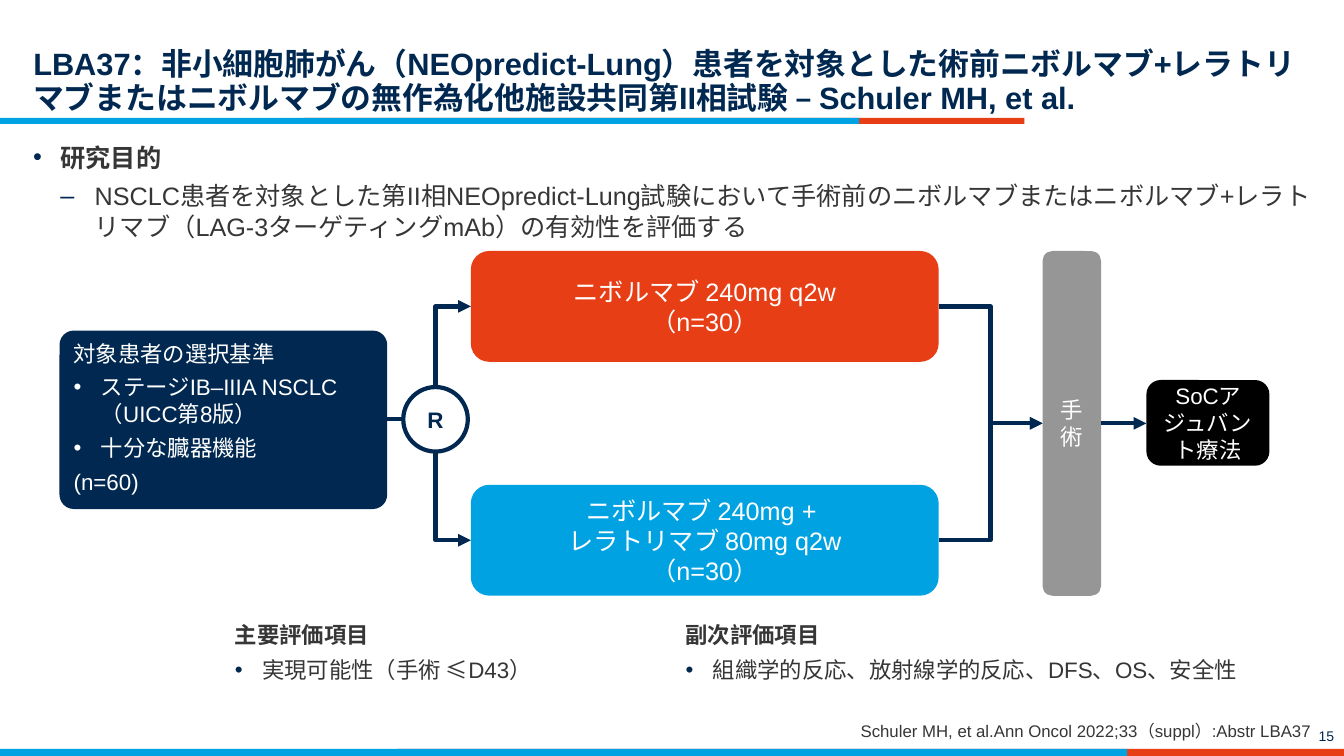
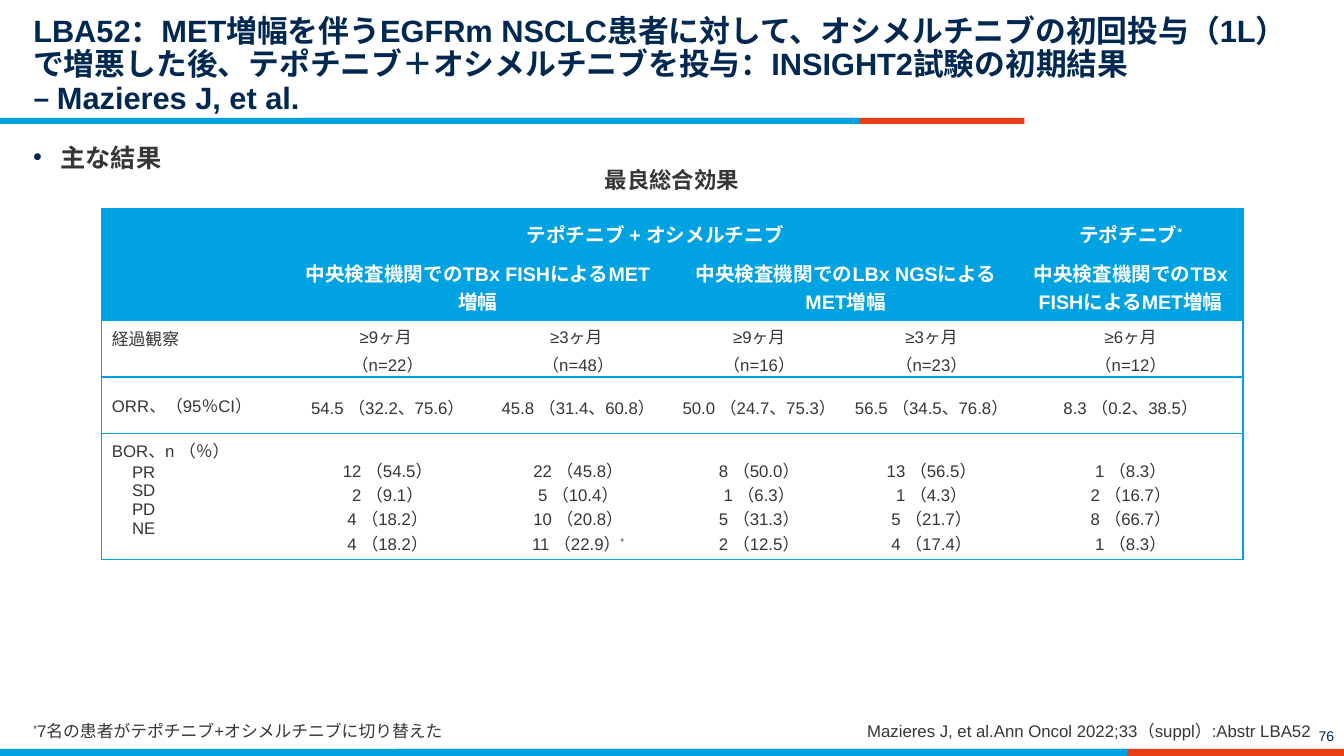
from lxml import etree
from pptx import Presentation
from pptx.dml.color import RGBColor
from pptx.enum.shapes import MSO_CONNECTOR, MSO_SHAPE
from pptx.enum.text import MSO_ANCHOR, MSO_AUTO_SIZE, PP_ALIGN
from pptx.oxml.ns import qn
from pptx.util import Inches, Pt

LEFT, CENTER, RIGHT = PP_ALIGN.LEFT, PP_ALIGN.CENTER, PP_ALIGN.RIGHT
TOP, MIDDLE, BOTTOM = MSO_ANCHOR.TOP, MSO_ANCHOR.MIDDLE, MSO_ANCHOR.BOTTOM
STRAIGHT, ELBOW = MSO_CONNECTOR.STRAIGHT, MSO_CONNECTOR.ELBOW
RECT, ROUNDED, OVAL = MSO_SHAPE.RECTANGLE, MSO_SHAPE.ROUNDED_RECTANGLE, MSO_SHAPE.OVAL

FONT = "Arial"
COLORS = {
    "navy": "002850",
    "blue": "00A2E1",
    "red": "E73E16",
    "text": "363636",
    "grey": "969696",
    "black": "000000",
    "white": "FFFFFF",
}
INDENTS = {"•": (0.27, 0.27), "–": (0.61, 0.34)}


def write(frame, lines, size, color="text", bold=False, align=LEFT, after=0, bullet_color="navy"):
    frame.text = "\n".join("" for _ in lines)
    for paragraph, line in zip(frame.paragraphs, lines):
        text, mark, line_bold = line if isinstance(line, tuple) else (line, "", bold)
        head, star, tail = text.partition("*")
        paragraph.text = head
        for piece in filter(None, (star, tail)):
            paragraph.add_run().text = piece
        for run in paragraph.runs:
            run.font.name = FONT
            run.font.size = Pt(size)
            run.font.bold = line_bold
            run.font.color.rgb = RGBColor.from_string(COLORS[color])
            if run.text == "*":
                run.font._element.set("baseline", "30000")
        paragraph.alignment = align
        paragraph.space_before = Pt(0)
        paragraph.space_after = Pt(after)
        if mark:
            margin, hanging = INDENTS[mark]
            properties = paragraph._p.get_or_add_pPr()
            properties.set("marL", str(Inches(margin)))
            properties.set("indent", str(-Inches(hanging)))
            tint = etree.SubElement(properties, qn("a:buClr"))
            etree.SubElement(tint, qn("a:srgbClr"), val=COLORS[bullet_color])
            etree.SubElement(properties, qn("a:buFont"), typeface=FONT)
            etree.SubElement(properties, qn("a:buChar"), char=mark)


def add_block(slide, kind, box, fill=None, anchor=TOP, margins=(0, 0.05, 0, 0.05)):
    position = [Inches(value) for value in box]
    if kind is None:
        block = slide.shapes.add_textbox(*position)
    else:
        block = slide.shapes.add_shape(kind, *position)
        block.shadow.inherit = False
        block.line.fill.background()
        block.fill.solid()
        block.fill.fore_color.rgb = RGBColor.from_string(COLORS[fill])
    frame = block.text_frame
    frame.word_wrap = True
    frame.vertical_anchor = anchor
    frame.margin_left, frame.margin_top, frame.margin_right, frame.margin_bottom = map(Inches, margins)
    return block


prs = Presentation()
prs.slide_width, prs.slide_height = Inches(13.33), Inches(7.5)
layout = prs.slide_layouts[5]
for placeholder in list(layout.placeholders)[1:]:
    placeholder.element.getparent().remove(placeholder.element)

pages = [
    ("LBA37：非小細胞肺がん（NEOpredict-Lung）患者を対象とした術前ニボルマブ+レラトリマブまたはニボルマブの無作為化他施設共同第II相試験 – Schuler MH, et al.",
     "Schuler MH, et al.Ann Oncol 2022;33（suppl）:Abstr LBA37", "15",
     [("研究目的", "•", True),
      ("NSCLC患者を対象とした第II相NEOpredict-Lung試験において手術前のニボルマブまたはニボルマブ+レラトリマブ（LAG-3ターゲティングmAb）の有効性を評価する", "–", False)]),
    ("LBA52：MET増幅を伴うEGFRm NSCLC患者に対して、オシメルチニブの初回投与（1L）で増悪した後、テポチニブ＋オシメルチニブを投与：INSIGHT2試験の初期結果 \v– Mazieres J, et al.",
     "Mazieres J, et al.Ann Oncol 2022;33（suppl）:Abstr LBA52", "76",
     [("主な結果", "•", True)]),
]
slides = []
for heading, citation, number, points in pages:
    slide = prs.slides.add_slide(layout)
    slides.append(slide)
    title = slide.shapes.title
    title.left, title.top, title.width, title.height = map(Inches, (0.33, 0.12, 12.67, 1.03))
    frame = title.text_frame
    frame.word_wrap = True
    frame.auto_size = MSO_AUTO_SIZE.NONE
    frame.vertical_anchor = BOTTOM
    frame.margin_left = frame.margin_right = frame.margin_bottom = 0
    write(frame, [heading], 22, "navy", bold=True)
    frame.paragraphs[0].line_spacing = 0.9

    body = add_block(slide, None, (0.33, 1.36, 12.67, 0.3 + 0.4 * len(points)))
    write(body.text_frame, points, 18, after=6)
    source = add_block(slide, None, (6.98, 7.13, 6.02, 0.22), anchor=BOTTOM, margins=(0, 0, 0, 0))
    write(source.text_frame, [citation], 12, align=RIGHT)
    page_number = add_block(slide, None, (12.68, 7.03, 0.65, 0.4), anchor=BOTTOM, margins=(0.1, 0.05, 0.1, 0.05))
    write(page_number.text_frame, [number], 10, "navy", align=RIGHT)

design, results = slides

for left, top, width, height, fill in [
    (3.94, 7.43, 9.39, 0.07, "red"),
    (0, 7.43, 11.18, 0.07, "blue"),
    (3.01, 1.17, 7.15, 0.06, "red"),
    (0, 1.17, 8.52, 0.06, "blue"),
]:
    band = add_block(design, RECT, (left, top, width, height), fill)
    layout.shapes.element.append(band.element)

criteria = add_block(design, ROUNDED, (0.59, 3.28, 3.25, 1.77), "navy", margins=(0.1, 0.05, 0.1, 0.05))
criteria.adjustments[0] = 0.08
write(criteria.text_frame, [
    "対象患者の選択基準",
    ("ステージIB–IIIA NSCLC \v（UICC第8版）", "•", False),
    ("十分な臓器機能", "•", False),
    "(n=60)",
], 16, "white", after=5, bullet_color="white")

flow_boxes = []
for box, fill, size, lines in [
    ((4.67, 2.49, 4.64, 1.1), "red", 18, ["ニボルマブ 240mg q2w", "（n=30）"]),
    ((4.67, 4.81, 4.64, 1.1), "blue", 18, ["ニボルマブ 240mg + \vレラトリマブ 80mg q2w", "（n=30）"]),
    ((10.34, 2.49, 0.58, 3.42), "grey", 16, ["手術"]),
    ((11.37, 3.77, 1.22, 0.85), "black", 16, ["SoCアジュバント療法"]),
]:
    flow_box = add_block(design, ROUNDED, box, fill, MIDDLE, (0.1, 0, 0.1, 0))
    write(flow_box.text_frame, lines, size, "white", align=CENTER)
    flow_boxes.append(flow_box)
nivolumab, combination, surgery, adjuvant = flow_boxes
surgery.text_frame._txBody.bodyPr.set("vert", "wordArtVert")

randomisation = add_block(design, OVAL, (4, 3.84, 0.64, 0.64), "white", MIDDLE)
randomisation.line.color.rgb = RGBColor.from_string(COLORS["navy"])
randomisation.line.width = Pt(3)
randomisation.text_frame.word_wrap = False
write(randomisation.text_frame, ["R"], 16, "navy", bold=True, align=CENTER)

for kind, preset, start, end, arrow in [
    (ELBOW, "bentConnector2", (4.67, 3.04), (4.32, 3.84), "headEnd"),
    (ELBOW, "bentConnector2", (4.67, 5.36), (4.32, 4.48), "headEnd"),
    (STRAIGHT, "line", (3.84, 4.16), (4, 4.16), None),
    (ELBOW, "bentConnector3", (9.31, 3.04), (10.34, 4.2), "tailEnd"),
    (ELBOW, "bentConnector3", (9.31, 5.36), (10.34, 4.2), "tailEnd"),
    (STRAIGHT, "line", (10.92, 4.2), (11.37, 4.2), "tailEnd"),
]:
    link = design.shapes.add_connector(kind, *map(Inches, start + end))
    link.line.color.rgb = RGBColor.from_string(COLORS["navy"])
    link.line.width = Pt(3)
    properties = link.element.spPr
    properties.find(qn("a:prstGeom")).set("prst", preset)
    if arrow:
        etree.SubElement(properties.find(qn("a:ln")), qn("a:" + arrow), type="triangle")
    etree.SubElement(properties, qn("a:effectLst"))

for left, width, heading, endpoint in [
    (2.33, 3.61, "主要評価項目", "実現可能性（手術 ≤D43）"),
    (6.8, 5.53, "副次評価項目", "組織学的反応、放射線学的反応、DFS、OS、安全性"),
]:
    endpoints = add_block(design, None, (left, 6.11, width, 0.8))
    write(endpoints.text_frame, [(heading, "", True), (endpoint, "•", False)], 16, after=6)

caption = add_block(results, None, (3.68, 1.65, 5.97, 0.3), margins=(0, 0, 0, 0))
write(caption.text_frame, ["最良総合効果"], 16, bold=True, align=CENTER)
footnote = add_block(results, None, (0.33, 6.82, 6.02, 0.53), anchor=BOTTOM, margins=(0, 0, 0, 0))
write(footnote.text_frame, ["*7名の患者がテポチニブ+オシメルチニブに切り替えた"], 12)

column_widths = [1.89, 1.89, 1.89, 1.7, 1.72, 2.23]
row_heights = [0.44, 0.67, 0.56, 0.56, 1.25]
rows = [
    ["", "テポチニブ + オシメルチニブ", "", "", "", "テポチニブ*"],
    ["", "中央検査機関でのTBx FISHによるMET増幅", "", "中央検査機関でのLBx NGSによるMET増幅", "",
     "中央検査機関でのTBx FISHによるMET増幅"],
    ["経過観察", "≥9ヶ月 \v（n=22）", "≥3ヶ月 \v（n=48）", "≥9ヶ月\v（n=16）", "≥3ヶ月\v（n=23）", "≥6ヶ月\v（n=12）"],
    ["ORR、（95％CI）", "54.5 （32.2、75.6）", "45.8 （31.4、60.8）", "50.0 （24.7、75.3）",
     "56.5 （34.5、76.8）", "8.3 （0.2、38.5）"],
    ["BOR、n （％）\nPR\nSD\nPD\nNE",
     "12 （54.5）\n2 （9.1）\n4 （18.2）\n4 （18.2）",
     "22 （45.8）\n5 （10.4）\n10 （20.8）\n11 （22.9）*",
     "8 （50.0）\n1 （6.3）\n5 （31.3）\n2 （12.5）",
     "13 （56.5）\n1 （4.3）\n5 （21.7）\n4 （17.4）",
     "1 （8.3）\n2 （16.7）\n8 （66.7）\n1 （8.3）"],
]
response = results.shapes.add_table(
    len(rows), len(column_widths), Inches(1.01), Inches(2.07),
    Inches(sum(column_widths)), Inches(sum(row_heights))).table
response.horz_banding = False
for column, width in zip(response.columns, column_widths):
    column.width = Inches(width)
for row, height in zip(response.rows, row_heights):
    row.height = Inches(height)
for row, first, last in [(0, 1, 4), (1, 1, 2), (1, 3, 4)]:
    response.cell(row, first).merge(response.cell(row, last))

last_row, last_column = len(rows) - 1, len(column_widths) - 1
for r, texts in enumerate(rows):
    for c, text in enumerate(texts):
        cell = response.cell(r, c)
        header, label = r < 2, c == 0
        borders = cell._tc.get_or_add_tcPr()
        for side, shown in [("L", label), ("R", c == last_column), ("T", True), ("B", True)]:
            border = etree.SubElement(borders, qn("a:ln" + side), w=str(Pt(1)))
            paint = etree.SubElement(border, qn("a:solidFill" if shown else "a:noFill"))
            if shown:
                etree.SubElement(paint, qn("a:srgbClr"), val=COLORS["blue"])
        cell.fill.solid()
        cell.fill.fore_color.rgb = RGBColor.from_string(COLORS["blue" if header else "white"])
        cell.vertical_anchor = BOTTOM if header else MIDDLE if r == 3 or (r == 2 and not label) else TOP
        if not text:
            continue
        write(cell.text_frame, text.split("\n"), 14 if header else 12, "white" if header else "text",
              bold=header, align=LEFT if label else CENTER)
        if r in (2, 3) and not label:
            cell.margin_left = cell.margin_right = Inches(0.07)
            cell.margin_top = cell.margin_bottom = 0
            cell.text_frame.paragraphs[0].line_spacing = 1.15
        if r == last_row and not label:
            cell.margin_top = Inches(0.24)
        for paragraph in cell.text_frame.paragraphs[1:] if label else []:
            paragraph._p.get_or_add_pPr().set("marL", str(Inches(0.2)))
response.cell(1, 1).margin_right = Inches(0.2)

prs.save("out.pptx")
